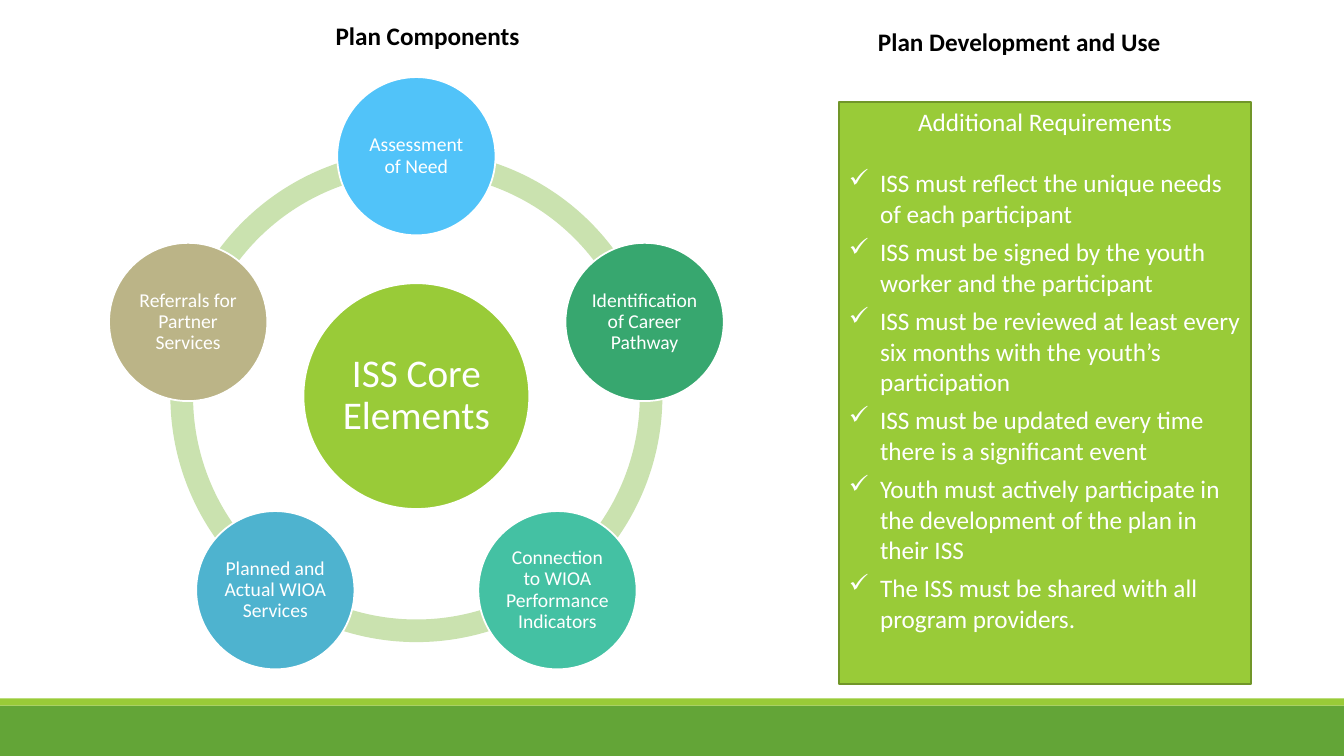
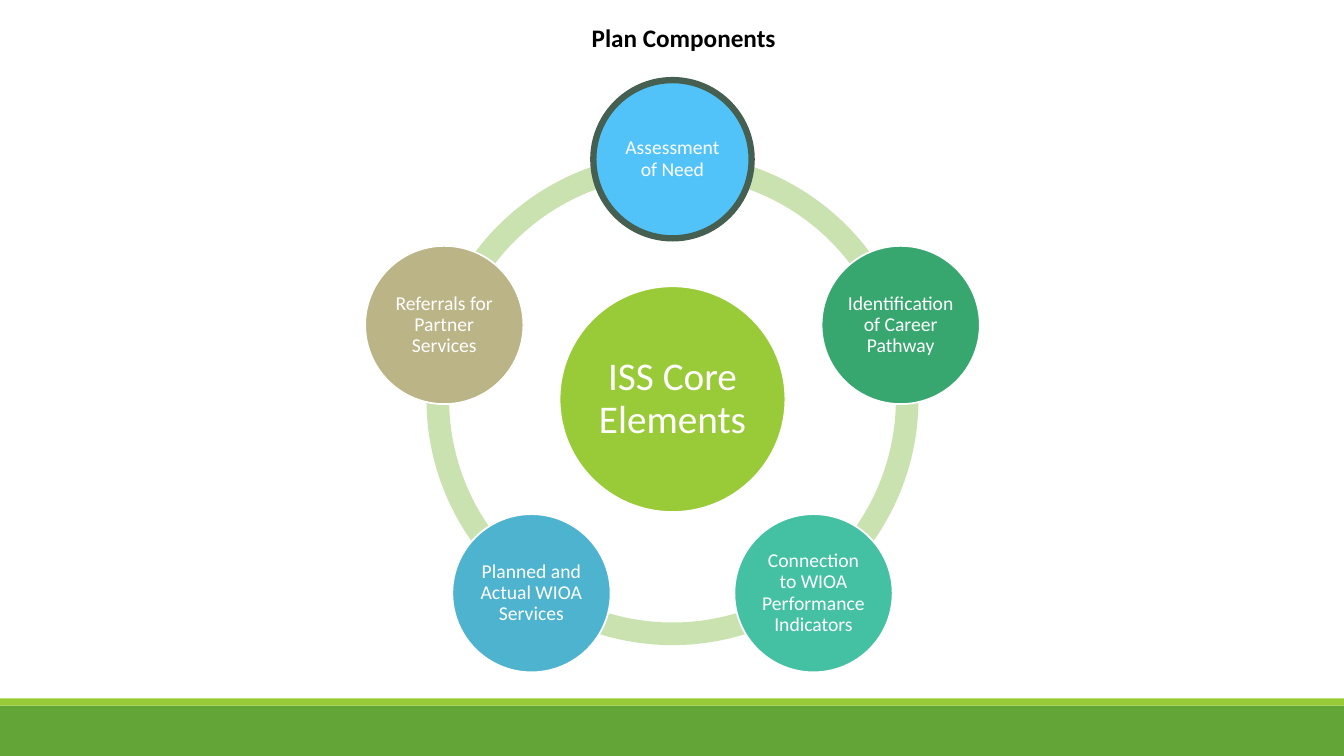
from math import cos, sin, radians
from pptx import Presentation
from pptx.util import Inches, Pt
from pptx.dml.color import RGBColor
from pptx.enum.shapes import MSO_SHAPE as Shape
from pptx.enum.text import MSO_ANCHOR as Anchor, MSO_AUTO_SIZE as Fit, PP_ALIGN as Align
from pptx.oxml.ns import qn
from lxml.etree import SubElement

GREEN = RGBColor(0x63, 0xA5, 0x37)
LIME = RGBColor(0x99, 0xCB, 0x38)
OLIVE = RGBColor(0x71, 0x96, 0x29)
PALE = RGBColor(0xCA, 0xE2, 0xAF)
SKY = RGBColor(0x51, 0xC3, 0xF9)
LEAF = RGBColor(0x37, 0xA7, 0x6F)
TEAL = RGBColor(0x44, 0xC1, 0xA3)
BLUE = RGBColor(0x4E, 0xB3, 0xCF)
SAND = RGBColor(0xBB, 0xB4, 0x87)
DARK = RGBColor(0x45, 0x5F, 0x51)
WHITE = RGBColor(0xFF, 0xFF, 0xFF)
BLACK = RGBColor(0, 0, 0)
FONT = "Calibri"

NODES = [
    ("Assessment of Need", SKY),
    ("Identification of Career Pathway", LEAF),
    ("Connection to WIOA Performance Indicators", TEAL),
    ("Planned and Actual WIOA Services", BLUE),
    ("Referrals for Partner Services", SAND),
]
STEP = 360 / len(NODES)
RULES = [
    "ISS must reflect the unique needs of each participant",
    "ISS must be signed by the youth worker and the participant",
    "ISS must be reviewed at least every six months with the youth’s participation",
    "ISS must be updated every time there is a significant event",
    "Youth must actively participate in the development of the plan in their ISS",
    "The ISS must be shared with all program providers.",
]
PAGES = [
    (4.13, 3.93, WHITE, 1.25, [("Plan Components", 3.23, 0.15, 2.04),
                               ("Plan Development and Use", 8.61, 0.21, 3.03)]),
    (6.67, 3.96, DARK, 4.5, [("Plan Components", 5.77, 0.17, 2.04)]),
]


def draw(slide, kind, x, y, w, h, fill, edge=None, width=1.25):
    shape = slide.shapes.add_shape(kind, Inches(x), Inches(y), Inches(w), Inches(h))
    shape.shadow.inherit = False
    shape.fill.solid()
    shape.fill.fore_color.rgb = fill
    if edge is None:
        shape.line.fill.background()
    else:
        shape.line.color.rgb = edge
        shape.line.width = Pt(width)
    return shape


def disc(slide, x, y, size, fill, edge, width, text, points, inset):
    shape = draw(slide, Shape.OVAL, x - size / 2, y - size / 2, size, size, fill, edge, width)
    frame = shape.text_frame
    frame.word_wrap = True
    frame.vertical_anchor = Anchor.MIDDLE
    frame.margin_left = frame.margin_right = Inches(inset)
    frame.margin_top = frame.margin_bottom = Inches(inset)
    para = frame.paragraphs[0]
    para.text = text
    para.alignment = Align.CENTER
    para.line_spacing = 0.9
    para.font.name = FONT
    para.font.size = Pt(points)
    para.font.color.rgb = WHITE


deck = Presentation()
deck.slide_width = Inches(13.33)
deck.slide_height = Inches(7.5)

for cx, cy, edge, width, titles in PAGES:
    slide = deck.slides.add_slide(deck.slide_layouts[6])
    draw(slide, Shape.RECTANGLE, 0, 7, 13.33, 0.5, GREEN)
    draw(slide, Shape.RECTANGLE, 0, 6.93, 13.33, 0.07, LIME)

    for i in range(len(NODES)):
        start = (270 + STEP * i) % 360
        arc = draw(slide, Shape.BLOCK_ARC, cx - 2.44, cy - 2.44, 4.88, 4.88, PALE)
        arc.adjustments[0] = start * 0.6
        arc.adjustments[1] = (start + STEP) % 360 * 0.6
        arc.adjustments[2] = 0.046

    disc(slide, cx, cy, 2.24, LIME, WHITE, 1.25, "ISS Core Elements", 28, 0.04)
    for i, (text, fill) in enumerate(NODES):
        turn = radians(STEP * i - 90)
        rim, thick = (edge, width) if i == 0 else (WHITE, 1.25)
        disc(slide, cx + 2.38 * cos(turn), cy + 2.38 * sin(turn), 1.57,
             fill, rim, thick, text, 14, 0.02)

    for text, x, y, w in titles:
        box = slide.shapes.add_textbox(Inches(x), Inches(y), Inches(w), Inches(0.4))
        box.text_frame.word_wrap = False
        box.text_frame.auto_size = Fit.SHAPE_TO_FIT_TEXT
        para = box.text_frame.paragraphs[0]
        para.text = text
        para.font.name = FONT
        para.font.size = Pt(18)
        para.font.bold = True
        para.font.color.rgb = BLACK

panel = draw(deck.slides[0], Shape.RECTANGLE, 8.32, 1.01, 4.09, 5.78, LIME, OLIVE)
frame = panel.text_frame
frame.word_wrap = True
frame.vertical_anchor = Anchor.TOP
for i, text in enumerate(["Additional Requirements"] + RULES):
    para = frame.paragraphs[0] if i == 0 else frame.add_paragraph()
    para.text = text
    para.font.name = FONT
    para.font.size = Pt(18)
    para.font.color.rgb = WHITE
    if i == 0:
        para.alignment = Align.CENTER
        para.space_after = Pt(22)
    else:
        para.alignment = Align.LEFT
        para.space_after = Pt(6)
        props = para._p.get_or_add_pPr()
        props.set("marL", str(Inches(0.31)))
        props.set("indent", str(-Inches(0.31)))
        SubElement(props, qn("a:buChar")).set("char", "✓")
        props.append(props.find(qn("a:defRPr")))

deck.save("out.pptx")
